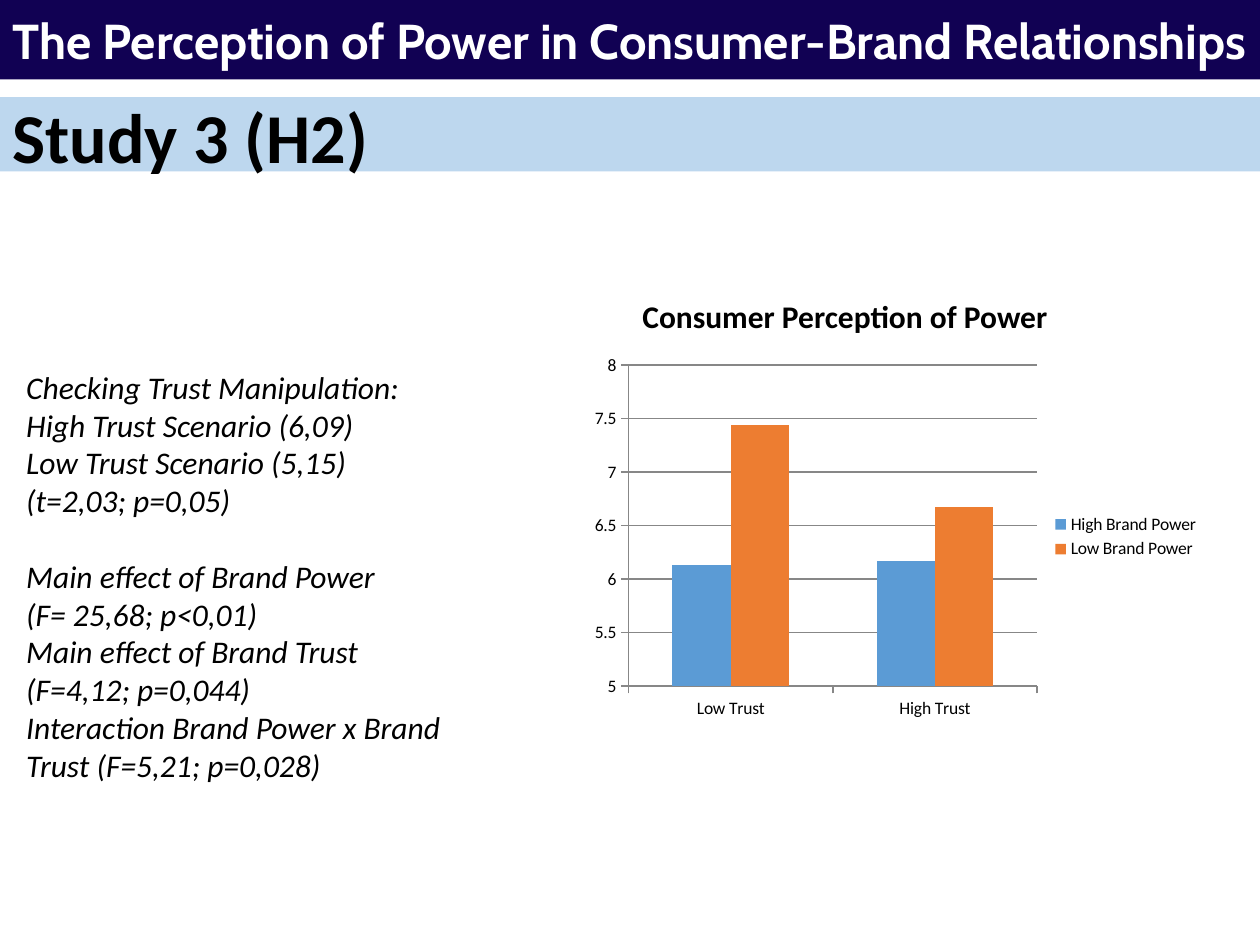
from dataclasses import dataclass
from typing import Any

from pptx import Presentation
from pptx import util as u
from pptx.chart import data as chart_data
from pptx.dml import color
from pptx.enum import chart as charts, shapes, text

WIDTH, HEIGHT = 10, 7.5


def rgb(hex_code):
    """Turn a hex string into a colour."""
    return color.RGBColor.from_string(hex_code)


@dataclass
class Deck:
    """Hold the style and the current slide."""

    slide: Any
    font: str = "Calibri"
    ink: str = "000000"
    axis: str = "878787"

    def place(self, left, top, width, height):
        """Turn shares of the slide into lengths."""
        return [u.Inches(share * full) for share, full in
                zip((left, top, width, height), (WIDTH, HEIGHT) * 2)]

    def add_words(self, paragraph, words, size, font=None, ink=None, bold=None, italic=None):
        """Add one styled run to a paragraph."""
        run = paragraph.add_run()
        run.text = words
        run.font.size = u.Pt(size)
        run.font.name = font or self.font
        run.font.color.rgb = rgb(ink or self.ink)
        run.font.bold, run.font.italic = bold, italic

    def band(self, box, fill, words, size, anchor, spacing=1.0, **look):
        """Draw a full-width heading band."""
        band = self.slide.shapes.add_shape(shapes.MSO_SHAPE.RECTANGLE, *self.place(*box))
        band.shadow.inherit = False
        band.fill.solid()
        band.fill.fore_color.rgb = rgb(fill)
        band.line.fill.background()
        frame = band.text_frame
        frame.word_wrap = True
        frame.vertical_anchor = anchor
        heading = frame.paragraphs[0]
        heading.alignment = text.PP_ALIGN.LEFT
        heading.line_spacing = spacing
        self.add_words(heading, words, size, bold=True, **look)

    def textbox(self, box, groups, size, wrap=True, **look):
        """Set groups of lines with one line of space between groups."""
        frame = self.slide.shapes.add_textbox(*self.place(*box)).text_frame
        frame.word_wrap = wrap
        paragraph = None
        for group in groups:
            for index, line in enumerate(group):
                first = paragraph is None
                paragraph = frame.paragraphs[0] if first else frame.add_paragraph()
                if index == 0 and not first:
                    paragraph.space_before = u.Pt(size * 1.2)
                self.add_words(paragraph, line, size, **look)

    def columns(self, box, categories, series, size):
        """Draw a clustered column chart from name, values and colour."""
        data = chart_data.CategoryChartData()
        data.categories = categories
        for name, values, _ in series:
            data.add_series(name, values)
        chart = self.slide.shapes.add_chart(
            charts.XL_CHART_TYPE.COLUMN_CLUSTERED, *self.place(*box), data).chart
        chart.has_title = False
        chart.font.size = u.Pt(size)
        chart.font.name = self.font
        chart.font.color.rgb = rgb(self.ink)
        chart.has_legend = True
        chart.legend.position = charts.XL_LEGEND_POSITION.RIGHT
        chart.legend.include_in_layout = False
        scale = chart.value_axis
        scale.minimum_scale, scale.maximum_scale, scale.major_unit = 5, 8, 0.5
        scale.has_major_gridlines = True
        scale.tick_labels.number_format = "General"
        scale.tick_labels.number_format_is_linked = False
        for line in (scale.major_gridlines.format.line, scale.format.line,
                     chart.category_axis.format.line):
            line.color.rgb = rgb(self.axis)
            line.width = u.Pt(0.75)
        for axis in (scale, chart.category_axis):
            axis.major_tick_mark = charts.XL_TICK_MARK.OUTSIDE
        plot = chart.plots[0]
        plot.gap_width, plot.overlap, plot.vary_by_categories = 150, 0, False
        for bars, (_, _, fill) in zip(plot.series, series):
            bars.invert_if_negative = False
            bars.format.fill.solid()
            bars.format.fill.fore_color.rgb = rgb(fill)


def main():
    """Build and save the slide."""
    prs = Presentation()
    prs.slide_width, prs.slide_height = u.Inches(WIDTH), u.Inches(HEIGHT)
    deck = Deck(prs.slides.add_slide(prs.slide_layouts[6]))

    deck.band((0, 0.77 / HEIGHT, 1, 0.59 / HEIGHT), "BDD7EE", "Study 3 (H2)", 40,
              text.MSO_ANCHOR.TOP, spacing=0.9)
    findings = [
        ["Checking Trust Manipulation:", "High Trust Scenario (6,09)",
         "Low Trust Scenario (5,15)", "(t=2,03; p=0,05)"],
        ["Main effect of Brand Power", "(F= 25,68; p<0,01)",
         "Main effect of Brand Trust", "(F=4,12; p=0,044)",
         "Interaction Brand Power x Brand Trust (F=5,21; p=0,028)"],
    ]
    deck.textbox((0.011, 2.87 / HEIGHT, 0.396, 4.64 / HEIGHT), findings, 18, italic=True)
    deck.band((0, 0, 1, 0.63 / HEIGHT), "110153",
              "The Perception of Power in Consumer-Brand Relationships", 28,
              text.MSO_ANCHOR.MIDDLE, font="Cabin", ink="FFFFFF")
    deck.columns((0.462, 2.76 / HEIGHT, 0.5, 0.4), ["Low Trust", "High Trust"],
                 [("High Brand Power", (6.13, 6.17), "5B9BD5"),
                  ("Low Brand Power", (7.44, 6.67), "ED7D31")], 10)
    deck.textbox((0.5, 2.31 / HEIGHT, 0.344, 0.4 / HEIGHT),
                 [["Consumer Perception of Power"]], 18, wrap=False, bold=True)
    prs.save("out.pptx")


if __name__ == "__main__":
    main()
